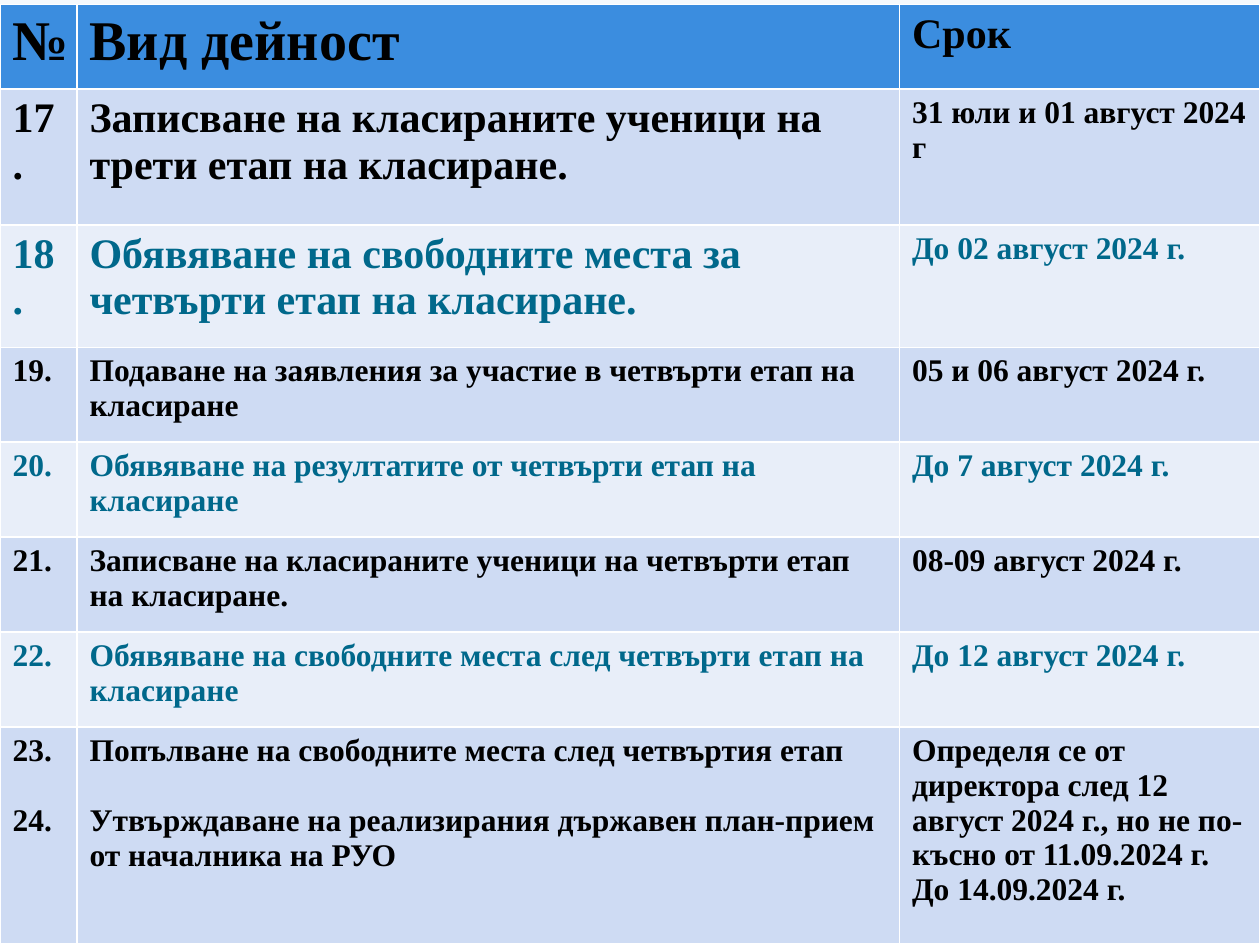
from lxml import etree
from pptx import Presentation
from pptx.dml.color import RGBColor
from pptx.oxml.ns import qn
from pptx.util import Pt

FONT = "Times New Roman"
COLORS = {
    "header": "3B8DDF",
    "odd_row": "CEDBF3",
    "even_row": "E8EEF9",
    "black": "000000",
    "teal": "00688B",
}
BACKGROUND_STOPS = [(0, "F5F9FD"), (74, "A7CCF1"), (83, "A7CCF1"), (100, "C4DDF5")]
COLUMN_WIDTHS = [44, 470, 206]
ROW_HEIGHTS = [48.5, 77.5, 70, 54.25, 54.25, 54.25, 54.25, 124]
TABLE_TOP = 2.5
ENTRY_GAP = 20

HEADER = ["№", "Вид дейност", "Срок"]
ACTIVITIES = [
    ["17.", "Записване на класираните ученици на трети етап на класиране.",
     "31 юли и 01 август 2024 г"],
    ["18.", "Обявяване на свободните места за четвърти етап на класиране.",
     "До 02 август 2024 г."],
    ["19.", "Подаване на заявления за участие в четвърти етап на класиране",
     "05 и 06 август 2024 г."],
    ["20.", "Обявяване на резултатите от четвърти етап на класиране",
     "До 7 август 2024 г."],
    ["21.", "Записване на класираните ученици на четвърти етап на класиране.",
     "08-09 август 2024 г."],
    ["22.", "Обявяване на свободните места след четвърти етап на класиране",
     "До 12 август 2024 г."],
    ["23.\n24.",
     "Попълване на свободните места след четвъртия етап\n"
     "Утвърждаване на реализирания държавен план-прием от началника на РУО",
     "Определя се от директора след 12 август 2024 г., но не по-късно от 11.09.2024 г.\n"
     "До 14.09.2024 г."],
]
HEADER_SIZES = [32, 32, 24]
LARGE_SIZES = [24, 24, 18]
NORMAL_SIZES = [18, 18, 18]
LARGE_ROWS = 2


def set_background(slide):
    fill = slide.background.fill
    fill.gradient()
    fill.gradient_angle = 270
    stop_list = slide.element.find(".//" + qn("a:gsLst"))
    for stop in list(stop_list):
        stop_list.remove(stop)
    for percent, color in BACKGROUND_STOPS:
        stop = etree.SubElement(stop_list, qn("a:gs"), pos=str(percent * 1000))
        etree.SubElement(stop, qn("a:srgbClr"), val=color)


def fill_cell(cell, text, size, color, background, gap):
    cell.fill.solid()
    cell.fill.fore_color.rgb = RGBColor.from_string(COLORS[background])
    for index, line in enumerate(text.split("\n")):
        if index == 0:
            paragraph = cell.text_frame.paragraphs[0]
        else:
            paragraph = cell.text_frame.add_paragraph()
            paragraph.space_before = Pt(gap)
        run = paragraph.add_run()
        run.text = line
        run.font.name = FONT
        run.font.size = Pt(size)
        run.font.bold = True
        run.font.color.rgb = RGBColor.from_string(COLORS[color])


def fill_row(table, row, texts, sizes, color, background):
    for column, (text, size) in enumerate(zip(texts, sizes)):
        gap = ENTRY_GAP if column < 2 else 0
        fill_cell(table.cell(row, column), text, size, color, background, gap)


def add_schedule(slide):
    table = slide.shapes.add_table(
        len(ROW_HEIGHTS), len(COLUMN_WIDTHS), Pt(0), Pt(TABLE_TOP),
        Pt(sum(COLUMN_WIDTHS)), Pt(sum(ROW_HEIGHTS))).table
    for column, width in zip(table.columns, COLUMN_WIDTHS):
        column.width = Pt(width)
    for row, height in zip(table.rows, ROW_HEIGHTS):
        row.height = Pt(height)
    fill_row(table, 0, HEADER, HEADER_SIZES, "black", "header")
    for row, texts in enumerate(ACTIVITIES, start=1):
        sizes = LARGE_SIZES if row <= LARGE_ROWS else NORMAL_SIZES
        color, background = ("black", "odd_row") if row % 2 else ("teal", "even_row")
        fill_row(table, row, texts, sizes, color, background)


def main():
    """Build the slide with the admission schedule."""
    presentation = Presentation()
    presentation.slide_width = Pt(720)
    presentation.slide_height = Pt(540)
    slide = presentation.slides.add_slide(presentation.slide_layouts[6])
    set_background(slide)
    add_schedule(slide)
    presentation.save("out.pptx")


if __name__ == "__main__":
    main()
